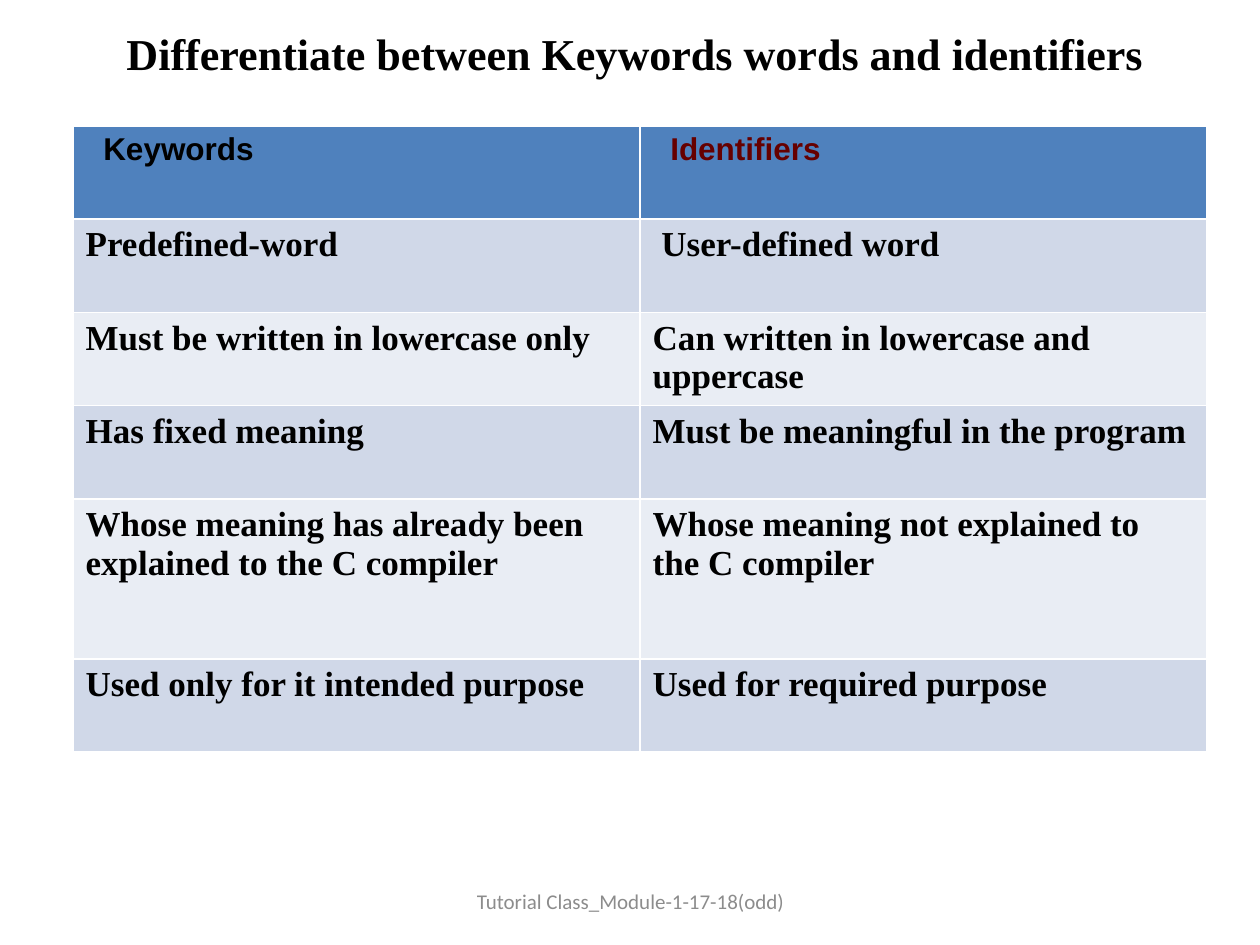
from pptx import Presentation
from pptx.dml.color import RGBColor
from pptx.enum import text
from pptx.util import Inches, Pt

BLACK = RGBColor(0x00, 0x00, 0x00)
MAROON = RGBColor(0x66, 0x00, 0x00)
GRAY = RGBColor(0x8C, 0x8C, 0x8C)
BLUE = RGBColor(0x4F, 0x81, 0xBD)
BANDS = RGBColor(0xD0, 0xD8, 0xE8), RGBColor(0xE9, 0xED, 0xF4)
SERIF = "Times New Roman"
CENTER = text.PP_ALIGN.CENTER

HEADS = [("Keywords", BLACK), ("Identifiers", MAROON)]
ROWS = [
    ("Predefined-word", "User-defined word"),
    ("Must be written in lowercase only",
     "Can written in lowercase and uppercase"),
    ("Has fixed meaning", "Must be meaningful in the program"),
    ("Whose meaning has already been explained to the C compiler",
     "Whose meaning not explained to the C compiler"),
    ("Used only for it intended purpose", "Used for required purpose"),
]
TALL = 4  # table row with room for three lines


def write(frame, words, size=20, font=SERIF, color=BLACK, bold=True,
          align=text.PP_ALIGN.LEFT):
    para = frame.paragraphs[0]
    para.alignment = align
    run = para.add_run()
    run.text = words
    run.font.size = Pt(size)
    run.font.name = font
    run.font.bold = bold
    run.font.color.rgb = color


def paint(cell, color):
    cell.fill.solid()
    cell.fill.fore_color.rgb = color


def add_title(slide, words):
    title = slide.shapes.title
    title.left, title.top = Inches(0.25), Inches(0.17)
    title.width, title.height = Inches(9.58), Inches(0.5)
    title.text_frame.vertical_anchor = text.MSO_ANCHOR.MIDDLE
    write(title.text_frame, words, size=25.2, align=CENTER)


def add_grid(slide):
    grid = slide.shapes.add_table(
        len(ROWS) + 1, len(HEADS), Inches(0.58), Inches(1),
        Inches(9), Inches(4.98)).table
    for i, row in enumerate(grid.rows):
        row.height = Inches(1.27 if i == TALL else 0.74)
    for j, (words, color) in enumerate(HEADS):
        cell = grid.cell(0, j)
        paint(cell, BLUE)
        cell.margin_left = Inches(0.24)
        write(cell.text_frame, words, size=18, font="Arial", color=color)
    for i, row in enumerate(ROWS):
        for j, words in enumerate(row):
            cell = grid.cell(i + 1, j)
            paint(cell, BANDS[i % 2])
            write(cell.text_frame, words)
    grid.cell(1, 1).margin_left = Inches(0.17)


def add_footer(slide, words):
    box = slide.shapes.add_textbox(
        Inches(3.42), Inches(6.95), Inches(3.17), Inches(0.4))
    frame = box.text_frame
    frame.word_wrap = True
    frame.vertical_anchor = text.MSO_ANCHOR.MIDDLE
    write(frame, words, size=12, font="Calibri", color=GRAY, bold=False,
          align=CENTER)


def main():
    deck = Presentation()
    deck.slide_width, deck.slide_height = Inches(10), Inches(7.5)
    slide = deck.slides.add_slide(deck.slide_layouts[5])
    add_title(slide, "Differentiate between Keywords words and identifiers")
    add_grid(slide)
    add_footer(slide, "Tutorial Class_Module-1-17-18(odd)")
    deck.save("out.pptx")


if __name__ == "__main__":
    main()
